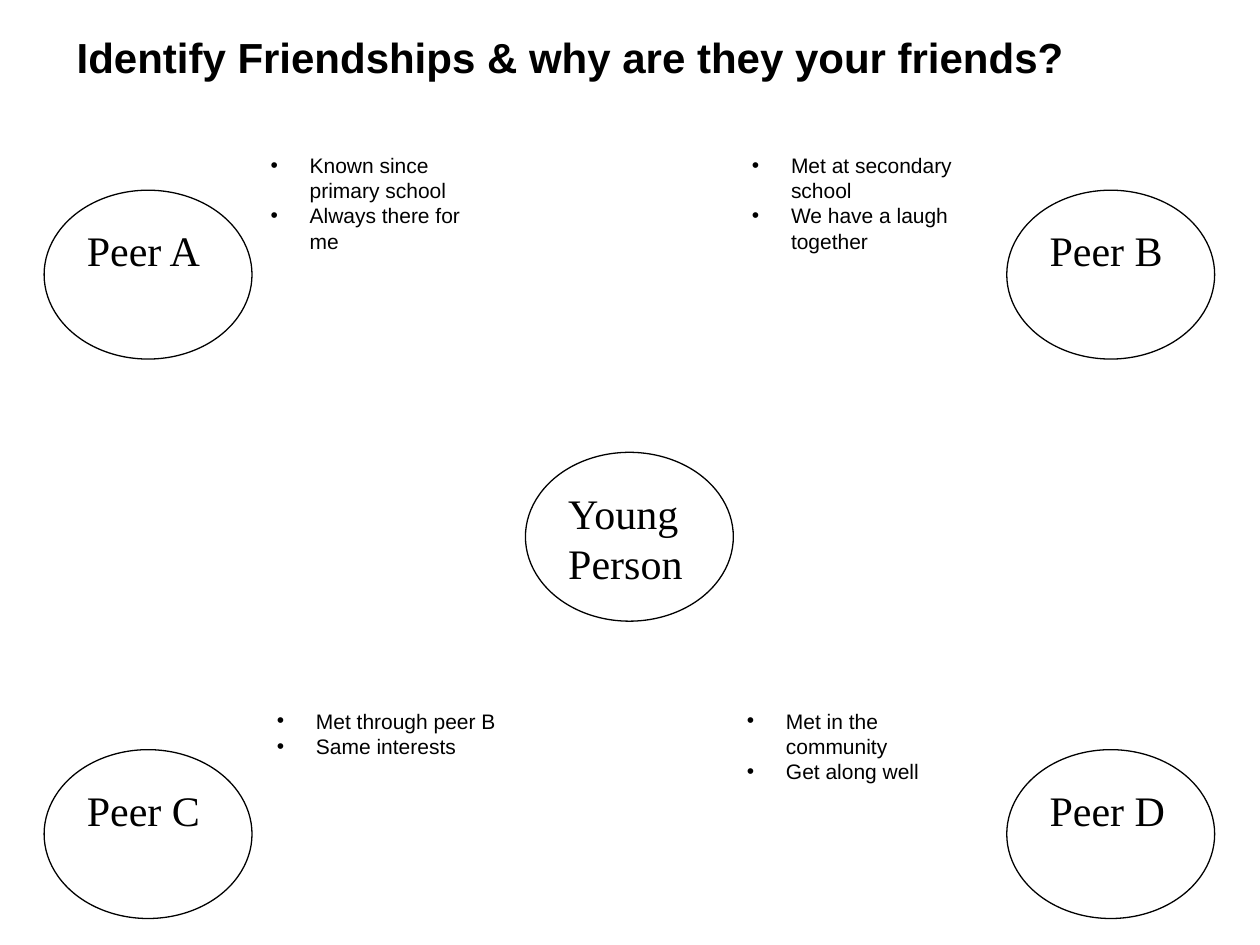
from pptx import Presentation
from pptx.dml.color import RGBColor
from pptx.enum.shapes import MSO_SHAPE as Shape
from pptx.enum.text import MSO_ANCHOR as Anchor, PP_ALIGN as Align
from pptx.oxml import parse_xml
from pptx.oxml.ns import nsdecls
from pptx.util import Inches, Pt

BLACK = RGBColor(0, 0, 0)
WHITE = RGBColor(255, 255, 255)


def write(frame, *lines, font="Arial", size=12, bold=False, bullet=False):
    frame.word_wrap = True
    frame.vertical_anchor = Anchor.TOP
    for index, line in enumerate(lines):
        paragraph = frame.add_paragraph() if index else frame.paragraphs[0]
        paragraph.alignment = Align.LEFT
        run = paragraph.add_run()
        run.text = line
        run.font.name, run.font.size, run.font.bold = font, Pt(size), bold
        run.font.color.rgb = BLACK
        if bullet:
            properties = paragraph._p.get_or_add_pPr()
            properties.set("marL", str(Inches(0.31)))
            properties.set("indent", str(-Inches(0.31)))
            properties.append(parse_xml(f'<a:buFont {nsdecls("a")} typeface="Arial"/>'))
            properties.append(parse_xml(f'<a:buChar {nsdecls("a")} char="•"/>'))


class FriendshipMap:
    """Draws people and the reasons for friendship on one slide."""

    def __init__(self, slide):
        self.shapes = slide.shapes

    def text(self, left, top, width, height, *lines, inset=0.06, **style):
        box = self.shapes.add_textbox(Inches(left), Inches(top), Inches(width), Inches(height))
        box.text_frame.margin_top = Inches(inset)
        write(box.text_frame, *lines, **style)

    def person(self, left, top, name):
        oval = self.shapes.add_shape(Shape.OVAL, Inches(left), Inches(top), Inches(1.65), Inches(1.34))
        oval.shadow.inherit = False
        oval.fill.solid()
        oval.fill.fore_color.rgb = WHITE
        oval.line.color.rgb = BLACK
        oval.line.width = Pt(0.75)
        oval.text_frame.margin_top = Inches(0.08)
        write(oval.text_frame, name, font="Times New Roman", size=24)

    def reasons(self, left, top, height, *lines):
        self.text(left, top, 1.97, height, *lines, bullet=True)


def main():
    deck = Presentation()
    deck.slide_width, deck.slide_height = Inches(10), Inches(7.5)
    friends = FriendshipMap(deck.slides.add_slide(deck.slide_layouts[6]))

    friends.text(0.51, 0.17, 8.98, 0.71, "Identify Friendships & why are they your friends?",
                 inset=0.08, size=24, bold=True)

    friends.person(4.17, 3.59, "Young Person")
    left, right, upper, lower = 0.35, 7.99, 1.51, 5.95
    friends.person(left, upper, "Peer A")
    friends.person(right, upper, "Peer B")
    friends.person(left, lower, "Peer C")
    friends.person(right, lower, "Peer D")

    friends.reasons(2.05, 1.15, 1.11, "Known since primary school", "Always there for me")
    friends.reasons(5.87, 1.15, 1.11, "Met at secondary school", "We have a laugh together")
    friends.reasons(2.1, 5.56, 0.71, "Met through peer B", "Same interests")
    friends.reasons(5.83, 5.56, 1.11, "Met in the community", "Get along well")

    deck.save("out.pptx")


if __name__ == "__main__":
    main()
